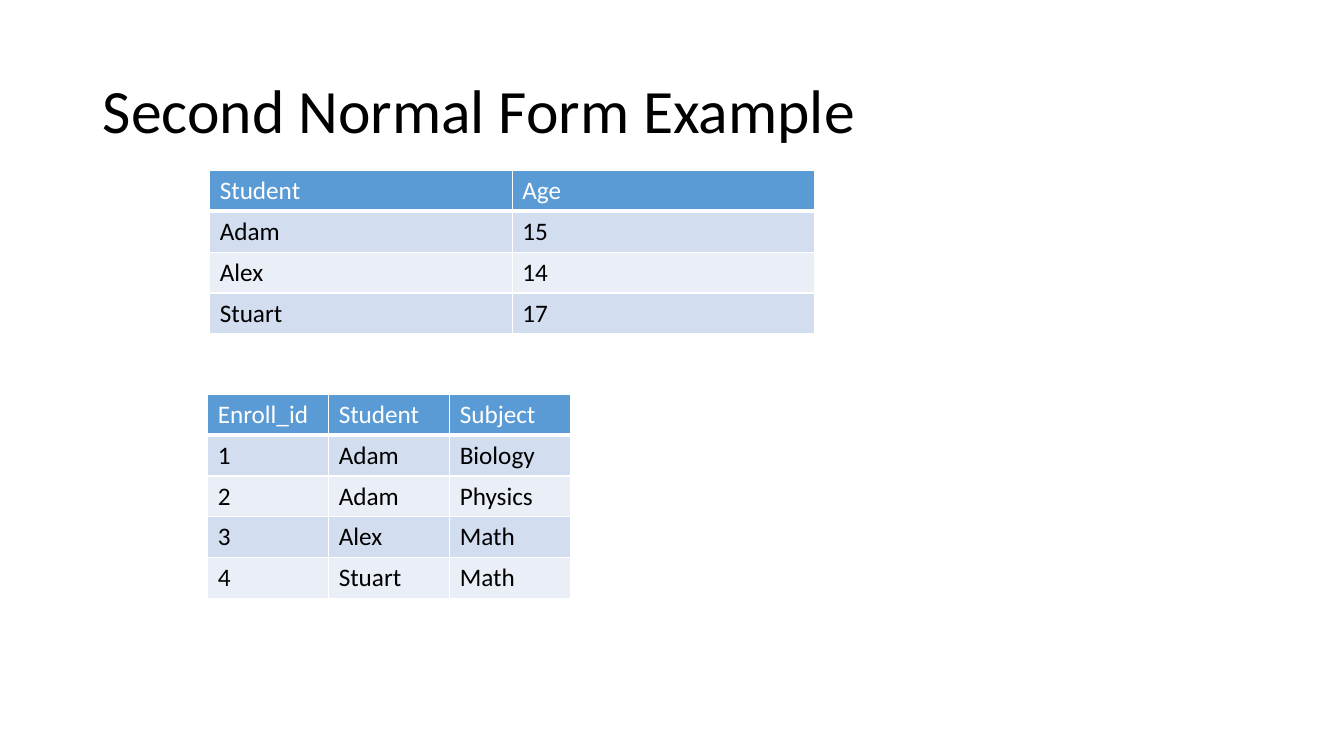
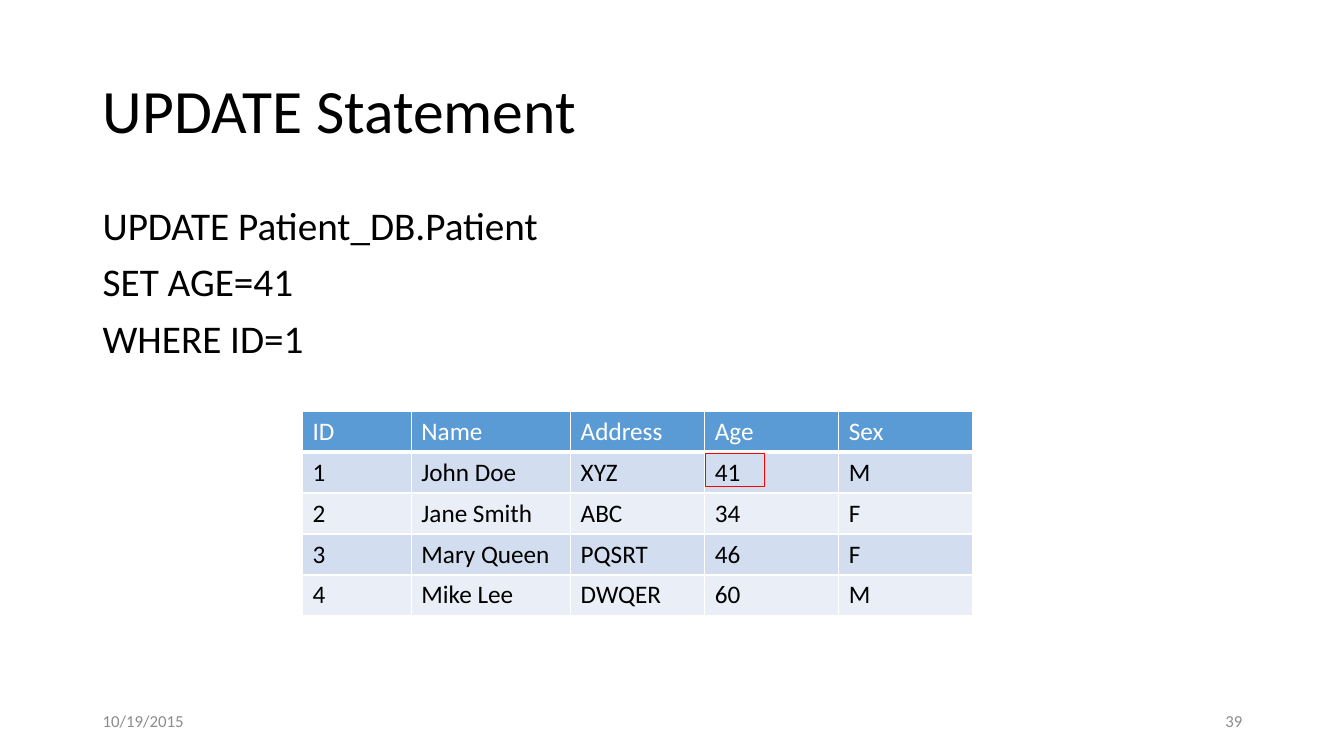
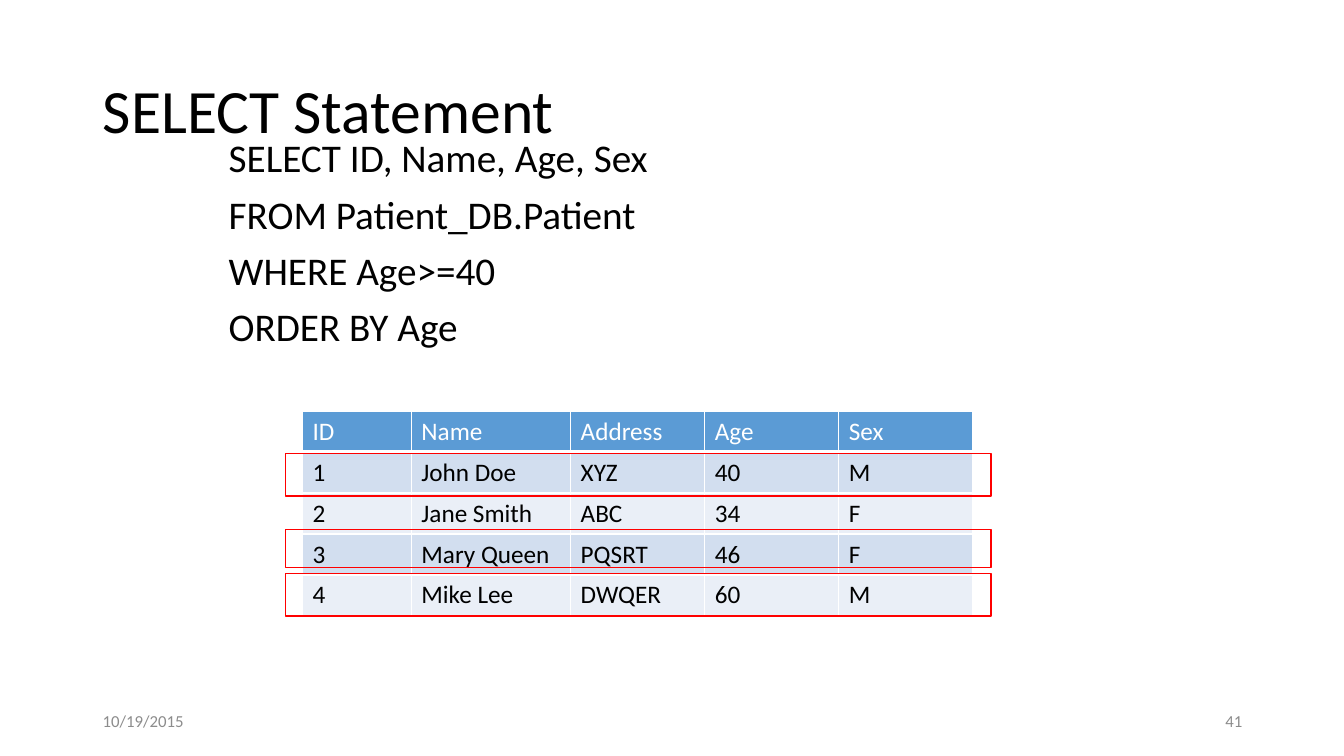
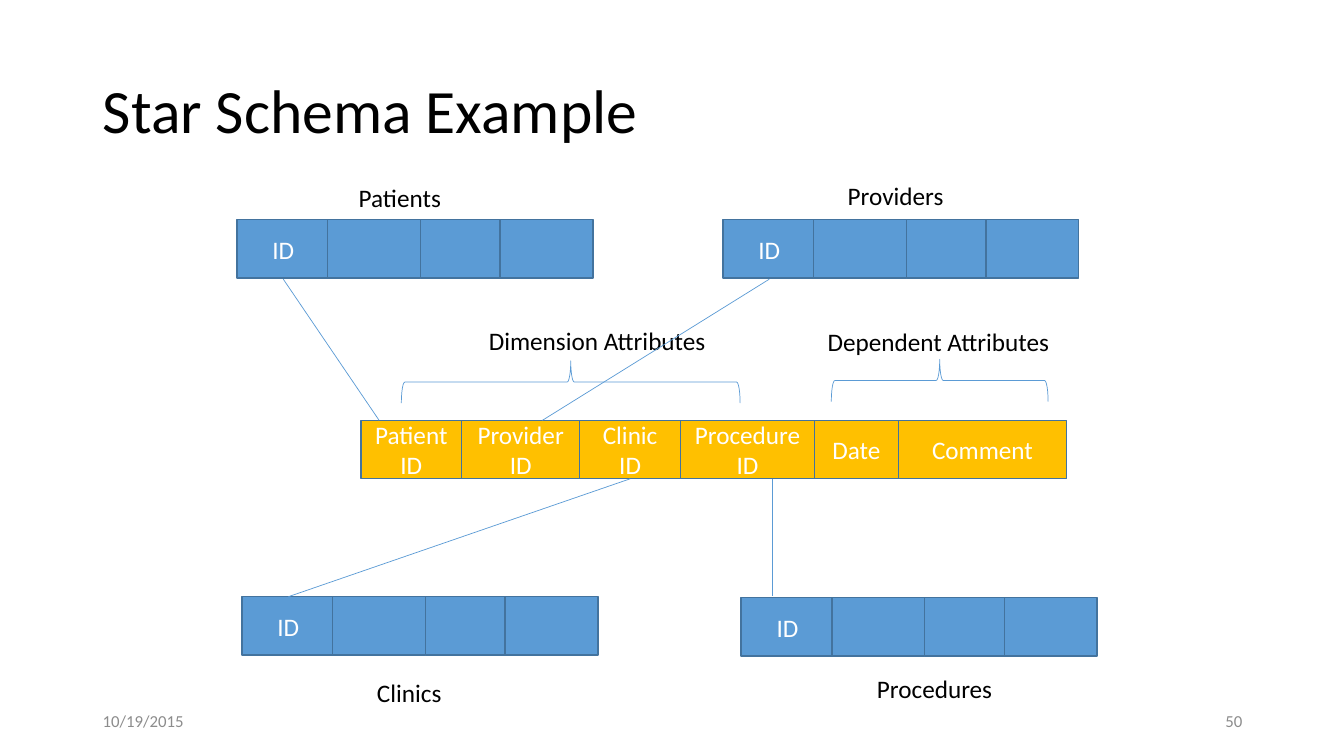
from itertools import accumulate

from lxml import etree
from pptx import Presentation
from pptx.dml.color import RGBColor
from pptx.enum.shapes import MSO_CONNECTOR, MSO_SHAPE
from pptx.enum.text import MSO_ANCHOR, MSO_AUTO_SIZE, PP_ALIGN
from pptx.oxml.ns import qn
from pptx.util import Inches, Pt

TOP, MIDDLE = MSO_ANCHOR.TOP, MSO_ANCHOR.MIDDLE
LEFT, CENTER, RIGHT = PP_ALIGN.LEFT, PP_ALIGN.CENTER, PP_ALIGN.RIGHT
NO_FIT, GROW = MSO_AUTO_SIZE.NONE, MSO_AUTO_SIZE.SHAPE_TO_FIT_TEXT
RECT, BRACE = MSO_SHAPE.RECTANGLE, MSO_SHAPE.LEFT_BRACE
STRAIGHT = MSO_CONNECTOR.STRAIGHT

FONT = "Calibri"
COLORS = {
    "text": "000000", "white": "FFFFFF", "footer": "8C8C8C",
    "blue": "5B9BD5", "outline": "43739E", "gold": "FFC000",
    "band": "D2DEEF", "band_light": "EAEFF7", "mark": "FF0000",
}
DATE = "10/19/2015"

# Text formats: font size, colour key, paragraph settings, frame settings
FORMATS = {
    "title": (44, "text", {"alignment": LEFT, "line_spacing": 0.9},
              {"vertical_anchor": MIDDLE, "word_wrap": True, "auto_size": NO_FIT}),
    "body": (28, "text", {"line_spacing": 0.9, "space_before": Pt(10)},
             {"word_wrap": True}),
    "label": (18, "text", {}, {"word_wrap": False, "auto_size": GROW}),
    "box": (18, "white", {"alignment": CENTER},
            {"vertical_anchor": MIDDLE, "word_wrap": True}),
    "date": (12, "footer", {"alignment": LEFT},
             {"vertical_anchor": MIDDLE, "word_wrap": True}),
    "number": (12, "footer", {"alignment": RIGHT},
               {"vertical_anchor": MIDDLE, "word_wrap": True}),
    "header": (18, "white", {}, {}),
    "cell": (18, "text", {}, {}),
}

PATIENT_COLS = (1.08, 1.58, 1.33, 1.33, 1.33)
DIMENSION_OFFSETS = (0, 0.9, 1.82, 2.61)


def rgb(key):
    return RGBColor.from_string(COLORS[key])


def set_all(obj, values):
    for name, value in values.items():
        setattr(obj, name, value)


def write(tf, lines, style):
    """Fill a text frame with one paragraph per line in a named format."""
    size, color, para, frame = FORMATS[style]
    set_all(tf, frame)
    for i, line in enumerate(lines):
        p = tf.add_paragraph() if i else tf.paragraphs[0]
        set_all(p, para)
        r = p.add_run()
        r.text = line
        set_all(r.font, {"name": FONT, "size": Pt(size), "bold": False})
        r.font.color.rgb = rgb(color)


def add_text(s, box, lines, style):
    sp = s.shapes.add_textbox(*map(Inches, box))
    write(sp.text_frame, lines, style)


def add_slide(prs, title, number=None):
    s = prs.slides.add_slide(prs.slide_layouts[5])
    sp = s.shapes.title
    sp.left, sp.top, sp.width, sp.height = map(Inches, (0.92, 0.4, 11.5, 1.45))
    write(sp.text_frame, [title], "title")
    if number:
        add_text(s, (0.92, 6.95, 3, 0.4), [DATE], "date")
        add_text(s, (9.42, 6.95, 3, 0.4), [number], "number")
    return s


def add_shape(shapes, kind, box, line, width=1, fill=None, text=None):
    sp = shapes.add_shape(kind, *map(Inches, box))
    sp.shadow.inherit = False
    sp.line.color.rgb = rgb(line)
    sp.line.width = Pt(width)
    if fill:
        sp.fill.solid()
        sp.fill.fore_color.rgb = rgb(fill)
    else:
        sp.fill.background()
    if text:
        write(sp.text_frame, [text], "box")
    return sp


def add_line(s, x1, y1, x2, y2):
    ln = s.shapes.add_connector(STRAIGHT, *map(Inches, (x1, y1, x2, y2)))
    ln.line.color.rgb = rgb("blue")
    ln.line.width = Pt(0.5)
    etree.SubElement(ln._element.spPr, qn("a:effectLst"))


def add_brace(s, box):
    add_shape(s.shapes, BRACE, box, "blue", 0.5).rotation = 90


def set_borders(cell, bottom):
    tc_pr = cell._tc.get_or_add_tcPr()
    for side, width in (("L", 1), ("R", 1), ("T", 1), ("B", bottom)):
        ln = etree.SubElement(tc_pr, qn(f"a:ln{side}"), w=str(Pt(width)))
        fill = etree.SubElement(ln, qn("a:solidFill"))
        etree.SubElement(fill, qn("a:srgbClr"), val=COLORS["white"])


def add_table(s, left, top, height, cols, rows, anchor=TOP):
    """Table with a blue header row and alternating bands."""
    frame = s.shapes.add_table(
        len(rows), len(cols),
        *map(Inches, (left, top, sum(cols), height)))
    table = frame.table
    set_all(table, {"first_row": False, "horz_banding": False})
    for col, width in zip(table.columns, cols):
        col.width = Inches(width)
    for i, row in enumerate(rows):
        fill = ("band_light", "band")[i % 2] if i else "blue"
        for j, text in enumerate(row):
            cell = table.cell(i, j)
            set_borders(cell, 1 if i else 3)
            cell.fill.solid()
            cell.fill.fore_color.rgb = rgb(fill)
            cell.vertical_anchor = anchor
            write(cell.text_frame, [text], "cell" if i else "header")


def add_patients(s, john_age):
    add_table(s, 3, 4.08, 2.03, PATIENT_COLS, [
        ("ID", "Name", "Address", "Age", "Sex"),
        ("1", "John Doe", "XYZ", john_age, "M"),
        ("2", "Jane Smith", "ABC", "34", "F"),
        ("3", "Mary Queen", "PQSRT", "46", "F"),
        ("4", "Mike Lee", "DWQER", "60", "M"),
    ])


def add_fields(s, top, fields, fill):
    """Group of adjoining boxes, each given as (left, width, text)."""
    grp = s.shapes.add_group_shape()
    for left, width, text in fields:
        add_shape(grp.shapes, RECT, (left, top, width, 0.58),
                  "outline", fill=fill, text=text)


def normal_form_slide(prs):
    s = add_slide(prs, "Second Normal Form Example")
    add_table(s, 2.08, 1.69, 1.62, (3, 3), [
        ("Student", "Age"),
        ("Adam", "15"),
        ("Alex", "14"),
        ("Stuart", "17"),
    ], MIDDLE)
    add_table(s, 2.06, 3.91, 2.03, (1.2, 1.2, 1.2), [
        ("Enroll_id", "Student", "Subject"),
        ("1", "Adam", "Biology"),
        ("2", "Adam", "Physics"),
        ("3", "Alex", "Math"),
        ("4", "Stuart", "Math"),
    ], MIDDLE)


def update_slide(prs):
    s = add_slide(prs, "UPDATE Statement", "39")
    add_text(s, (0.92, 2, 11.5, 4.76),
             ["UPDATE Patient_DB.Patient", "SET AGE=41", "WHERE ID=1"], "body")
    add_patients(s, "41")
    add_shape(s.shapes, RECT, (7, 4.5, 0.58, 0.33), "mark")


def select_slide(prs):
    s = add_slide(prs, "SELECT Statement", "41")
    add_text(s, (2.17, 1.33, 9, 4.95),
             ["SELECT ID, Name, Age, Sex", "FROM Patient_DB.Patient",
              "WHERE Age>=40", "ORDER BY Age"], "body")
    add_patients(s, "40")
    # Selected rows
    grp = s.shapes.add_group_shape()
    for top, height in ((4.5, 0.42), (5.69, 0.42), (5.25, 0.38)):
        add_shape(grp.shapes, RECT, (2.83, top, 7, height), "mark")


def star_schema_slide(prs):
    s = add_slide(prs, "Star Schema Example", "50")

    # Fact table
    names = ("Patient ID", "Provider ID", "Clinic ID", "Procedure ID",
             "Date", "Comment")
    widths = (1, 1.17, 1, 1.33, 0.83, 1.67)
    lefts = accumulate(widths[:-1], initial=3.58)
    add_fields(s, 4.17, zip(lefts, widths, names), "gold")

    # Attribute braces
    add_brace(s, (5.45, 2.11, 0.42, 3.36))
    add_brace(s, (9.11, 2.7, 0.42, 2.15))

    # Dimension tables
    for left, top in ((2.35, 2.18), (7.35, 5.93), (2.4, 5.92), (7.17, 2.18)):
        add_fields(s, top, [(left + dx, 0.92, None if dx else "ID")
                            for dx in DIMENSION_OFFSETS], "blue")

    # Labels
    for text, left, top, width in (
            ("Dimension Attributes", 4.75, 3.18, 2.38),
            ("Dependent Attributes", 8.11, 3.19, 2.43),
            ("Patients", 3.46, 1.76, 1.03),
            ("Providers", 8.31, 1.74, 1.16),
            ("Clinics", 3.64, 6.67, 0.85),
            ("Procedures", 8.6, 6.63, 1.36)):
        add_text(s, (left, top, width, 0.4), [text], "label")

    # Links between keys
    for ends in ((2.81, 2.77, 3.76, 4.17), (7.63, 2.77, 5.38, 4.17),
                 (7.66, 5.91, 7.66, 4.75), (2.86, 5.92, 6.25, 4.75)):
        add_line(s, *ends)


def main():
    prs = Presentation()
    prs.slide_width, prs.slide_height = Inches(13.33), Inches(7.5)
    normal_form_slide(prs)
    update_slide(prs)
    select_slide(prs)
    star_schema_slide(prs)
    prs.save("out.pptx")


if __name__ == "__main__":
    main()
